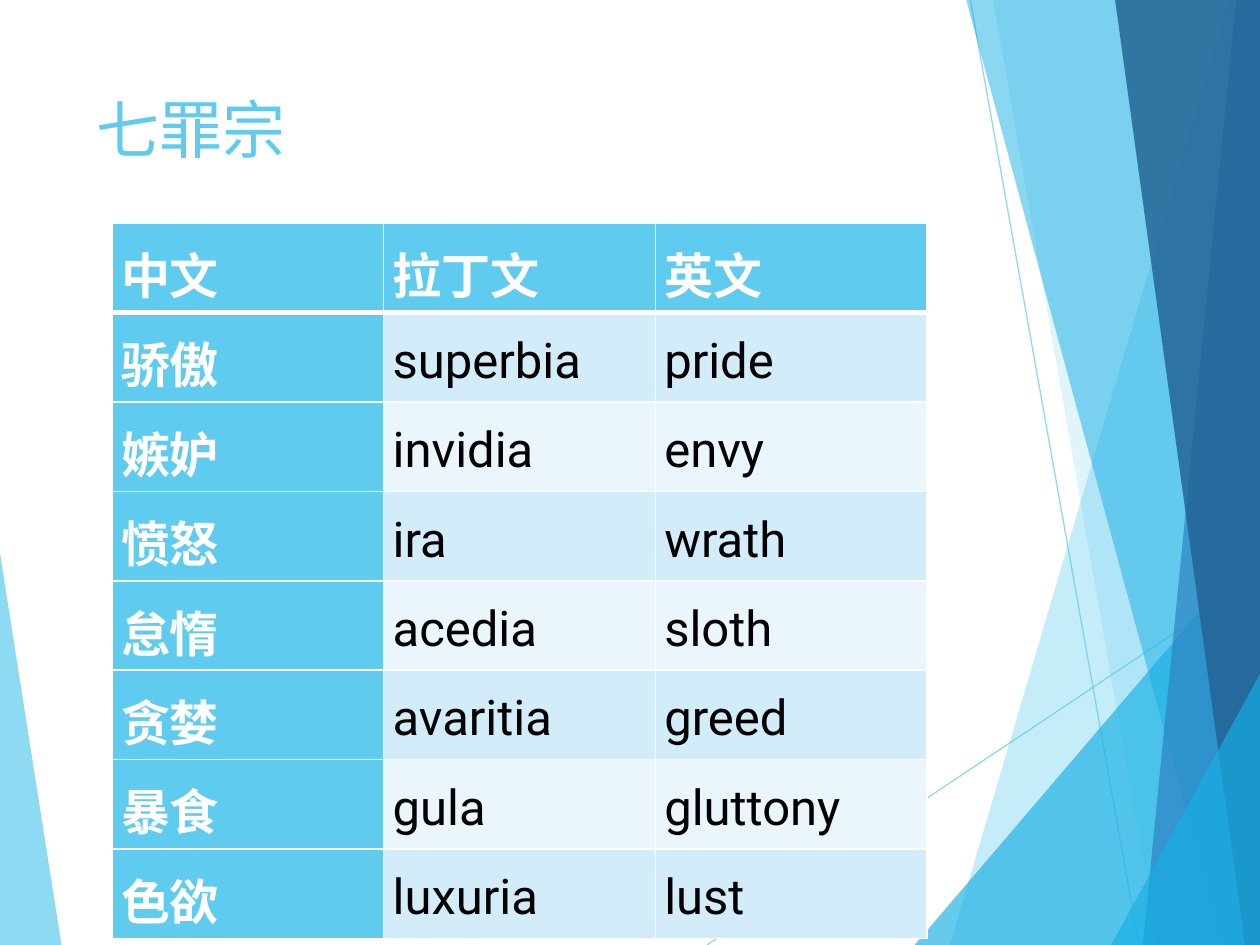
from lxml.etree import SubElement
from pptx import Presentation
from pptx.dml.color import RGBColor
from pptx.enum.shapes import MSO_CONNECTOR
from pptx.enum.text import MSO_ANCHOR, MSO_AUTO_SIZE, PP_ALIGN
from pptx.oxml.ns import qn
from pptx.util import Cm, Pt

SKY = RGBColor(0x5F, 0xCB, 0xEF)
CYAN = RGBColor(0x17, 0xB0, 0xE4)
BLUE = RGBColor(0x2E, 0x83, 0xC3)
NAVY = RGBColor(0x22, 0x62, 0x92)
BAND_DARK = RGBColor(0xD2, 0xEC, 0xF9)
BAND_LIGHT = RGBColor(0xEA, 0xF6, 0xFC)
WHITE = RGBColor(0xFF, 0xFF, 0xFF)
BLACK = RGBColor(0, 0, 0)
FONT = "Roboto"

SLIDE_WIDTH, SLIDE_HEIGHT = 25.4, 19.05  # cm

# Facets reach the right and bottom edges: top x, top y, bottom x, colour, opacity %
FACETS = [
    (24.77, 0, 19.15, SKY, 36),
    (20.02, 0, 23.34, SKY, 20),
    (25.4, 10.9, 18.44, CYAN, 66),
    (19.48, 0, 24.64, CYAN, 50),
    (24.92, 0, 23.04, BLUE, 70),
    (22.48, 0, 25.1, NAVY, 82),
    (25.4, 13.59, 22.4, CYAN, 66),
]
RAYS = [((14.25, 19.05), (25.4, 11.61)), ((19.56, 0), (22.96, 19.05))]

SINS = [
    ("中文", "拉丁文", "英文"),
    ("骄傲", "superbia", "pride"),
    ("嫉妒", "invidia", "envy"),
    ("愤怒", "ira", "wrath"),
    ("怠惰", "acedia", "sloth"),
    ("贪婪", "avaritia", "greed"),
    ("暴食", "gula", "gluttony"),
    ("色欲", "luxuria", "lust"),
]


def set_opacity(shape, percent):
    color = next(shape.element.spPr.iter(qn("a:srgbClr")))
    SubElement(color, qn("a:alpha"), val=str(percent * 1000))


def add_facet(slide, points, color, opacity):
    corners = [(Cm(x), Cm(y)) for x, y in points]
    builder = slide.shapes.build_freeform(*corners[0])
    builder.add_line_segments(corners[1:], close=True)
    facet = builder.convert_to_shape()
    facet.shadow.inherit = False
    facet.fill.solid()
    facet.fill.fore_color.rgb = color
    facet.line.fill.background()
    set_opacity(facet, opacity)


def add_ray(slide, start, end):
    ray = slide.shapes.add_connector(
        MSO_CONNECTOR.STRAIGHT, *(Cm(value) for value in start + end))
    ray.line.color.rgb = SKY
    ray.line.width = Pt(0.75)
    set_opacity(ray, 70)
    SubElement(ray.element.spPr, qn("a:effectLst"))


def add_backdrop(slide, left, top, width, height):
    right, bottom = left + width, top + height
    add_facet(slide, [(left, top + 11.15), (left + 1.24, bottom), (left, bottom)], SKY, 70)
    for (x1, y1), (x2, y2) in RAYS:
        add_ray(slide, (left + x1, top + y1), (left + x2, top + y2))
    for top_x, top_y, bottom_x, color, opacity in FACETS:
        points = [(left + top_x, top + top_y), (left + bottom_x, bottom), (right, bottom)]
        if top_x < width:
            points.append((right, top + top_y))
        add_facet(slide, points, color, opacity)


def format_run(paragraph, size, color, bold):
    font = paragraph.runs[0].font
    font.name, font.size, font.bold = FONT, Pt(size), bold
    font.color.rgb = color


def add_title(slide, left, top, width, height):
    title = slide.shapes.title
    title.left, title.top = Cm(left), Cm(top)
    title.width, title.height = Cm(width), Cm(height)
    frame = title.text_frame
    frame.text = "七罪宗"
    frame.auto_size = MSO_AUTO_SIZE.NONE
    frame.vertical_anchor = MSO_ANCHOR.TOP
    heading = frame.paragraphs[0]
    heading.alignment = PP_ALIGN.LEFT
    format_run(heading, 36, SKY, False)
    title.element.getparent().append(title.element)  # in front of the backdrop


def set_borders(cell, top, bottom):
    """Draw white borders; top and bottom are widths in points."""
    properties = cell._tc.get_or_add_tcPr()
    for side, width in (("L", 1), ("R", 1), ("T", top), ("B", bottom)):
        border = SubElement(properties, qn(f"a:ln{side}"), w=str(Pt(width)))
        fill = SubElement(border, qn("a:solidFill"))
        SubElement(fill, qn("a:srgbClr"), val=str(WHITE))


def fill_cell(cell, text, row, column):
    heading = row == 0 or column == 0
    set_borders(cell, 3 if row == 1 else 1, 3 if row == 0 else 1)
    cell.fill.solid()
    cell.fill.fore_color.rgb = SKY if heading else BAND_DARK if row % 2 else BAND_LIGHT
    cell.vertical_anchor = MSO_ANCHOR.MIDDLE
    cell.margin_left = cell.margin_right = Cm(0.18)
    cell.margin_top = cell.margin_bottom = Cm(0.08)
    cell.text_frame.text = text
    paragraph = cell.text_frame.paragraphs[0]
    paragraph.line_spacing = 1.15
    paragraph.space_after = Pt(8)
    format_run(paragraph, 28, WHITE if heading else BLACK, heading)


def add_sins_table(slide, left, top, width, height):
    table = slide.shapes.add_table(
        len(SINS), len(SINS[0]), Cm(left), Cm(top), Cm(width), Cm(height)).table
    table.first_col = True
    for row, words in enumerate(SINS):
        for column, word in enumerate(words):
            fill_cell(table.cell(row, column), word, row, column)


def main():
    presentation = Presentation()
    presentation.slide_width = Cm(SLIDE_WIDTH)
    presentation.slide_height = Cm(SLIDE_HEIGHT)
    slide = presentation.slides.add_slide(presentation.slide_layouts[5])
    add_backdrop(slide, 0, 0, SLIDE_WIDTH, SLIDE_HEIGHT)
    add_title(slide, 1.7, 1.7, 17.63, 3.66)
    add_sins_table(slide, 2.26, 4.5, 16.43, 11.94)
    presentation.save("out.pptx")


if __name__ == "__main__":
    main()
